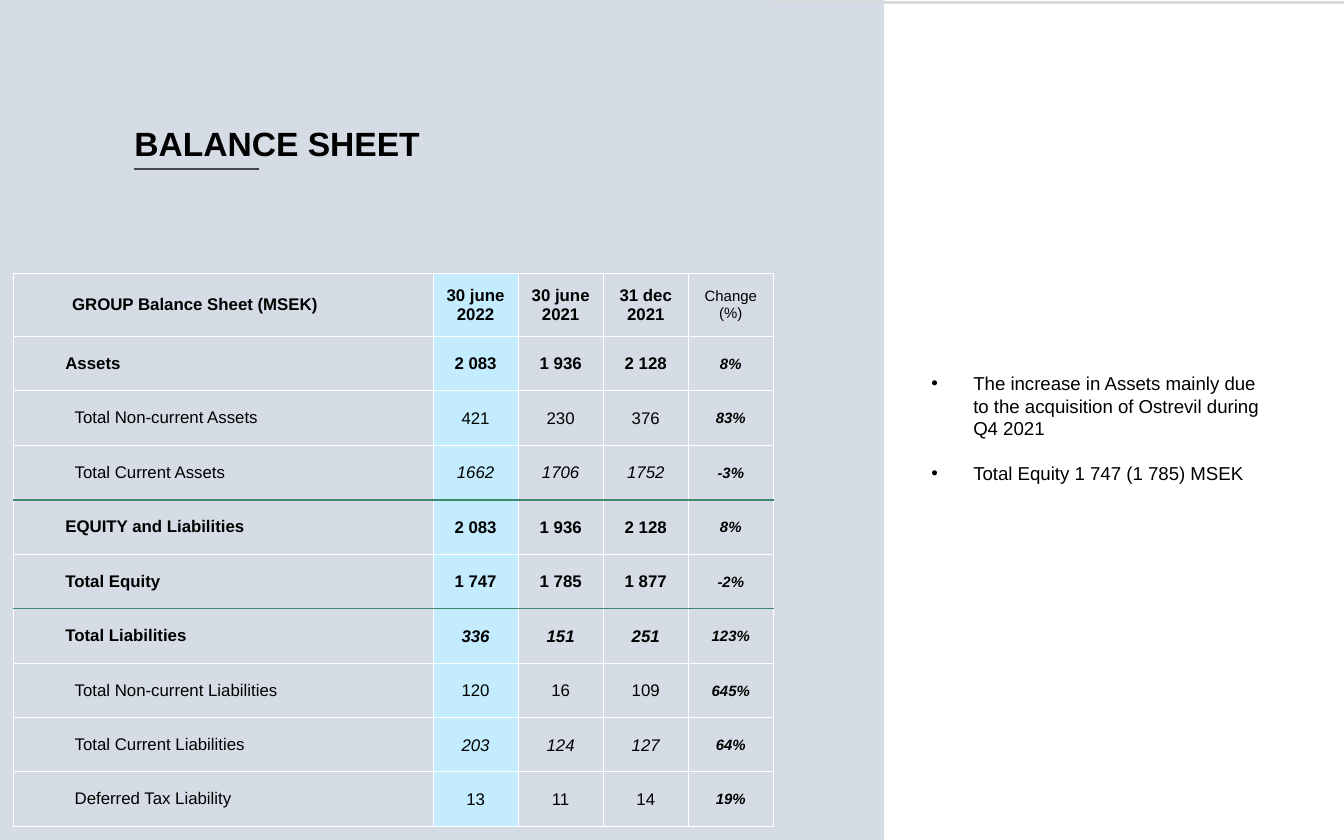
from lxml import etree
from pptx import Presentation
from pptx.dml.color import RGBColor
from pptx.enum.shapes import MSO_CONNECTOR, MSO_SHAPE
from pptx.enum.text import MSO_ANCHOR, MSO_AUTO_SIZE, PP_ALIGN
from pptx.oxml import parse_xml
from pptx.oxml.ns import nsdecls, qn
from pptx.util import Pt

LINE, RECT = MSO_CONNECTOR.STRAIGHT, MSO_SHAPE.RECTANGLE
TOP, MIDDLE, BOTTOM = MSO_ANCHOR.TOP, MSO_ANCHOR.MIDDLE, MSO_ANCHOR.BOTTOM
LEFT, CENTER = PP_ALIGN.LEFT, PP_ALIGN.CENTER
BLACK = RGBColor(0x00, 0x00, 0x00)
WHITE = RGBColor(0xFF, 0xFF, 0xFF)
PANEL = RGBColor(0xD6, 0xDC, 0xE5)
HIGHLIGHT = RGBColor(0xC3, 0xED, 0xFF)
LIGHT_GREY = RGBColor(0xD8, 0xDB, 0xDC)
DARK_GREY = RGBColor(0x42, 0x48, 0x49)
GREEN = RGBColor(0x3F, 0x89, 0x6E)

HEADER = ["GROUP Balance Sheet (MSEK)", "30 june\n2022", "30 june\n2021",
          "31 dec 2021", "Change (%)"]
# label, three values, change, bold row, italic values
ROWS = [
    ("Assets", "2 083", "1 936", "2 128", "8%", True, False),
    ("Total Non-current Assets", "421", "230", "376", "83%", False, False),
    ("Total Current Assets", "1662", "1706", "1752", "-3%", False, True),
    ("EQUITY and Liabilities", "2 083", "1 936", "2 128", "8%", True, False),
    ("Total Equity", "1 747", "1 785", "1 877", "-2%", True, False),
    ("Total Liabilities", "336", "151", "251", "123%", True, True),
    ("Total Non-current Liabilities", "120", "16", "109", "645%", False, False),
    ("Total Current Liabilities", "203", "124", "127", "64%", False, True),
    ("Deferred Tax Liability", "13", "11", "14", "19%", False, False),
]
NOTES = ["The increase in Assets mainly due to the acquisition of Ostrevil during Q4 2021",
         "Total Equity 1 747 (1 785) MSEK"]
TABLE_LEFT, TABLE_TOP = 7, 146.4
LABEL_W, VALUE_W = 225, 45.6
HEADER_H, ROW_H = 33.75, 29.17
TABLE_W = LABEL_W + 4 * VALUE_W


def format_runs(p, size, bold=False, italic=False):
    for r in p.runs:
        r.font.name, r.font.size = "Arial", Pt(size)
        r.font.bold, r.font.italic = bold, italic
        r.font.color.rgb = BLACK


def add_rule(x1, x2, y, color, width):
    """Draw a horizontal line without a shadow."""
    line = s.shapes.add_connector(LINE, Pt(x1), Pt(y), Pt(x2), Pt(y))
    line.line.color.rgb, line.line.width = color, Pt(width)
    etree.SubElement(line.element.spPr, qn("a:effectLst"))
    return line


prs = Presentation()
prs.slide_width, prs.slide_height = Pt(720), Pt(450)
s = prs.slides.add_slide(prs.slide_layouts[5])
title = s.shapes.title

# Background panel and top rule, behind the title
panel = s.shapes.add_shape(RECT, 0, 0, Pt(473.7), Pt(450))
panel.shadow.inherit = False
panel.fill.solid()
panel.fill.fore_color.rgb = PANEL
panel.line.fill.background()
top_rule = add_rule(414.7, 720, 1.4, LIGHT_GREY, 1.5)
for sp in (top_rule, panel):
    s.shapes[0].element.addprevious(sp.element)

# Title
title.left, title.top, title.width, title.height = Pt(72), Pt(27.4), Pt(576.7), Pt(60.5)
tf = title.text_frame
tf.text = "BALANCE SHEET"
tf.auto_size, tf.vertical_anchor = MSO_AUTO_SIZE.NONE, BOTTOM
tf.margin_left = tf.margin_top = tf.margin_right = tf.margin_bottom = 0
p = tf.paragraphs[0]
p.alignment, p.line_spacing = LEFT, 0.9
format_runs(p, 18, bold=True)
add_rule(72, 139, 90.6, DARK_GREY, 1)

# Balance sheet table
frame = s.shapes.add_table(len(ROWS) + 1, 5, Pt(TABLE_LEFT), Pt(TABLE_TOP), Pt(TABLE_W),
                           Pt(HEADER_H + ROW_H * len(ROWS)))
table = frame.table
table.first_row = table.horz_banding = False
for c, column in enumerate(table.columns):
    column.width = Pt(VALUE_W if c else LABEL_W)
for r, row in enumerate(table.rows):
    row.height = Pt(ROW_H if r else HEADER_H)
    if r:
        *texts, bold_row, italic_row = ROWS[r - 1]
    else:
        texts, bold_row, italic_row = HEADER, True, False
    for c, cell in enumerate(row.cells):
        is_change = c == 4
        cell.text = texts[c]
        cell.vertical_anchor = MIDDLE
        cell.margin_left = cell.margin_right = Pt(0 if r and c == 0 else 0.7 if r else 3.6)
        cell.margin_top = Pt(0.7 if r and c else 0)
        cell.margin_bottom = 0
        for p in cell.text_frame.paragraphs:
            if c:
                p.alignment = CENTER
            else:
                p._p.get_or_add_pPr().set("marL", str(Pt(28 if bold_row else 33)))
            format_runs(p, 8 if is_change else 9,
                        bold=r > 0 if is_change else bold_row,
                        italic=r > 0 if is_change else italic_row and c > 0)
        if c == 1:
            cell.fill.solid()
            cell.fill.fore_color.rgb = HIGHLIGHT
        else:
            cell.fill.background()
        tcPr = cell._tc.get_or_add_tcPr()
        for i, side in enumerate("LRTB"):
            tcPr.insert(i, parse_xml(
                f'<a:ln{side} {nsdecls("a")} w="{Pt(0.5)}"><a:solidFill>'
                f'<a:srgbClr val="{WHITE}"/></a:solidFill></a:ln{side}>'))

# Comments
box = s.shapes.add_shape(RECT, Pt(491.8), Pt(195.8), Pt(195), Pt(140.4))
box.shadow.inherit = False
box.fill.solid()
box.fill.fore_color.rgb = WHITE
box.line.fill.background()
tf = box.text_frame
tf.word_wrap, tf.vertical_anchor = True, TOP
tf.text = "\n".join(NOTES)
for i, p in enumerate(tf.paragraphs):
    pPr = p._p.get_or_add_pPr()
    pPr.set("marL", str(Pt(22.5)))
    pPr.set("indent", str(-Pt(22.5)))
    etree.SubElement(pPr, qn("a:buFont")).set("typeface", "Arial")
    etree.SubElement(pPr, qn("a:buChar")).set("char", "•")
    p.alignment = LEFT
    if i:
        p.space_before = Pt(12)
    format_runs(p, 10)

# Section separators below the third and fifth data rows
for n in (3, 5):
    add_rule(TABLE_LEFT, TABLE_LEFT + TABLE_W, TABLE_TOP + HEADER_H + n * ROW_H, GREEN, 1)

prs.save("out.pptx")
